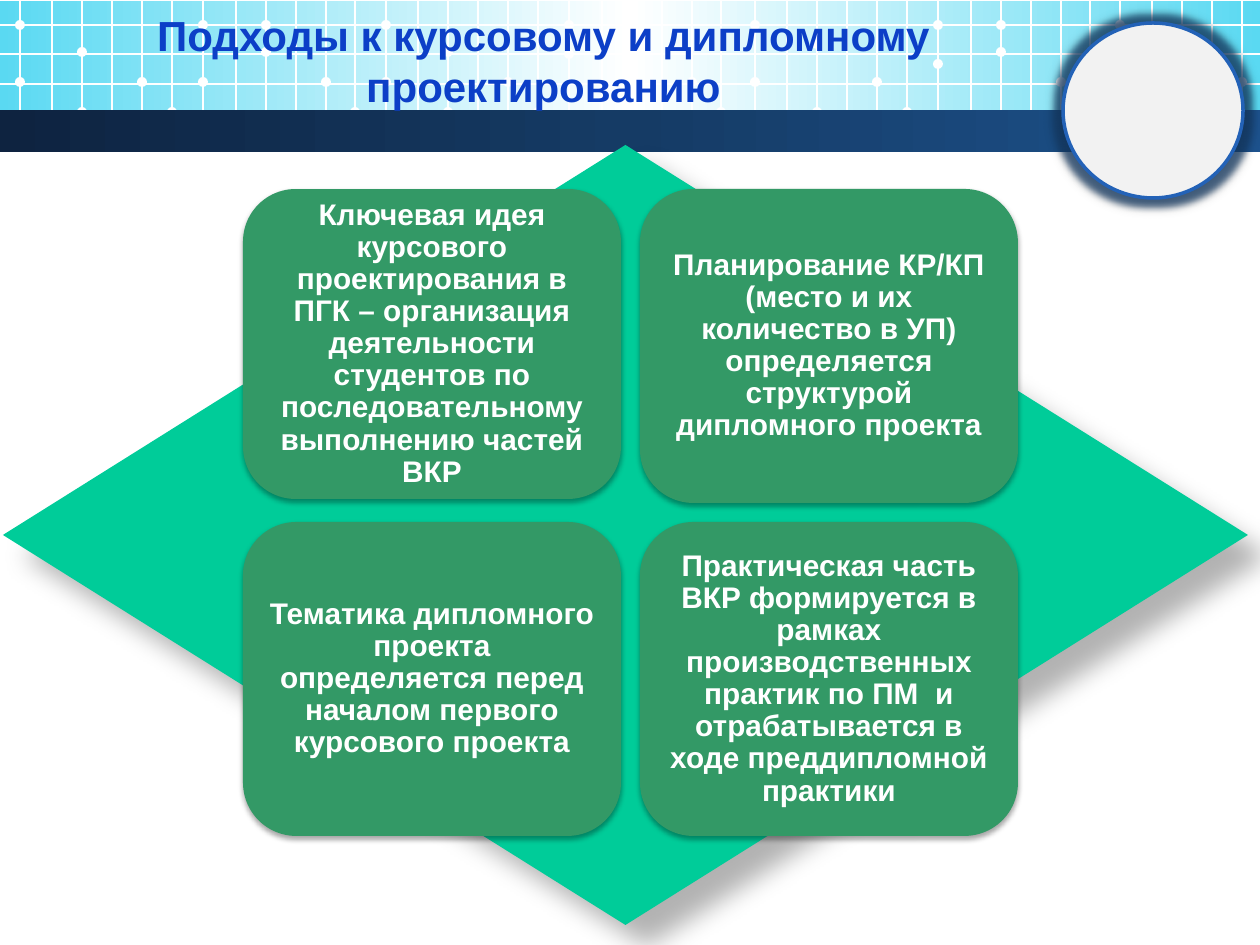
from lxml import etree
from pptx import Presentation
from pptx import util as u
from pptx.dml.color import RGBColor
from pptx.enum import shapes, text
from pptx.oxml import ns

SCALE = 914400 / 126
FONT = "Arial"
WHITE = RGBColor(0xFF, 0xFF, 0xFF)
CYAN = RGBColor(0x5A, 0xD9, 0xF2)
NAVY = RGBColor(0x0E, 0x23, 0x40)
DEEP_BLUE = RGBColor(0x15, 0x3B, 0x65)
BLUE = RGBColor(0x1D, 0x52, 0x8D)
RING = RGBColor(0x23, 0x62, 0xB7)
PALE = RGBColor(0xF2, 0xF2, 0xF2)
TITLE_BLUE = RGBColor(0x0C, 0x3F, 0xC7)
MINT = RGBColor(0x00, 0xCC, 0x99)
GREEN = RGBColor(0x33, 0x99, 0x66)
BLACK = RGBColor(0, 0, 0)

TITLE = "Подходы к курсовому и дипломному проектированию"
IDEAS = [
    "Ключевая идея курсового проектирования в ПГК – организация деятельности "
    "студентов по последовательному выполнению частей ВКР",
    "Планирование КР/КП (место и их количество в УП) определяется структурой "
    "дипломного проекта",
    "Тематика дипломного проекта определяется перед началом первого курсового проекта",
    "Практическая часть ВКР формируется в рамках производственных практик по ПМ  и "
    "отрабатывается в ходе преддипломной практики",
]


def px(length):
    return u.Emu(round(length * SCALE))


def add_element(parent, tag, **attributes):
    values = {name: str(value) for name, value in attributes.items()}
    return etree.SubElement(parent, ns.qn(tag), values)


def add_color(parent, color, opacity=100):
    node = add_element(parent, "a:srgbClr", val=color)
    if opacity < 100:
        add_element(node, "a:alpha", val=opacity * 1000)


def add_effects(shape, shadow, glow=None):
    effects = shape._element.spPr.find(ns.qn("a:effectLst"))
    if glow:
        color, opacity, radius = glow
        add_color(add_element(effects, "a:glow", rad=u.Pt(radius)), color, opacity)
    opacity, blur, distance, angle = shadow
    node = add_element(effects, "a:outerShdw", blurRad=u.Pt(blur), dist=u.Pt(distance),
                       dir=angle * 60000, algn="ctr", rotWithShape=0)
    add_color(node, BLACK, opacity)


def add_gradient(shape, colors):
    shape.fill.gradient()
    shape.fill.gradient_angle = 0
    stops = shape._element.spPr.find(ns.qn("a:gradFill")).find(ns.qn("a:gsLst"))
    for stop in list(stops):
        stops.remove(stop)
    for index, color in enumerate(colors):
        position = 100000 * index // (len(colors) - 1)
        add_color(add_element(stops, "a:gs", pos=position), color)


def add_plain_shape(slide, kind, box, color=None):
    shape = slide.shapes.add_shape(kind, *map(px, box))
    shape.shadow.inherit = False
    shape.line.fill.background()
    if color is not None:
        shape.fill.solid()
        shape.fill.fore_color.rgb = color
    return shape


def add_grid_line(slide, x1, y1, x2, y2):
    line = slide.shapes.add_connector(shapes.MSO_CONNECTOR.STRAIGHT,
                                      px(x1), px(y1), px(x2), px(y2))
    line.line.color.rgb = WHITE
    line.line.width = u.Pt(0.75)
    add_element(line._element.spPr, "a:effectLst")


def write_text(shape, wording, size, color, margin_x, margin_y):
    frame = shape.text_frame
    frame.text = wording
    frame.word_wrap = True
    frame.vertical_anchor = text.MSO_ANCHOR.MIDDLE
    frame.margin_left = frame.margin_right = px(margin_x)
    frame.margin_top = frame.margin_bottom = px(margin_y)
    paragraph = frame.paragraphs[0]
    paragraph.alignment = text.PP_ALIGN.CENTER
    font = paragraph.runs[0].font
    font.name, font.size, font.bold = FONT, u.Pt(size), True
    font.color.rgb = color
    return paragraph


def draw_header(slide, left, top, width, height):
    backdrop = add_plain_shape(slide, shapes.MSO_SHAPE.RECTANGLE,
                               (left, top + 1, width, 128))
    add_gradient(backdrop, [CYAN, WHITE, CYAN])
    columns = [0, 32, 62, 92, 122, 152, 183, 216, 246, 276, 306, 335]
    blocks = [(20, 12, 52, 82), (386, 12, 52, 54), (755, 12, 44, 64), (1120, 5, 52, 54)]
    for start, count, upper, middle in blocks:
        dot_rows = {0: (25, 82), 2: (upper, 112), 4: (82,), 5: (112,),
                    6: (25, middle), 8: (25, 52), 10: (82,), 11: (112,)}
        for index, offset in enumerate(columns[:count]):
            x = left + start + offset
            add_grid_line(slide, x, top, x, top + 139)
            for y in dot_rows.get(index, ()):
                add_plain_shape(slide, shapes.MSO_SHAPE.OVAL,
                                (x - 5, top + y - 5, 10, 10), WHITE)
    for y in (25, 54, 84, 112):
        add_grid_line(slide, left, top + y, left + width, top + y)
    band = add_plain_shape(slide, shapes.MSO_SHAPE.RECTANGLE,
                           (left, top + 110, width, height - 110))
    add_gradient(band, [NAVY, DEEP_BLUE, BLUE])
    badge = add_plain_shape(slide, shapes.MSO_SHAPE.OVAL,
                            (left + width - 197, top + 23, 180, 175), PALE)
    badge.line.color.rgb = RING
    badge.line.width = u.Pt(2)
    add_effects(badge, (40, 5, 0, 0), glow=(DEEP_BLUE, 70, 8))


def draw_title(slide, left, top, width, height):
    box = slide.shapes.add_textbox(*map(px, (left, top, width, height)))
    write_text(box, TITLE, 24, TITLE_BLUE, 13, 6)


def draw_matrix(slide, left, top, width, height):
    diamond = add_plain_shape(slide, shapes.MSO_SHAPE.DIAMOND,
                              (left, top, width, height), MINT)
    add_effects(diamond, (30, 15, 18, 45))
    card_width, card_height = 378, 314
    for index, idea in enumerate(IDEAS):
        row, column = divmod(index, 2)
        card_box = (left + 240 + column * (card_width + 19),
                    top + 44 + row * (card_height + 19),
                    card_width, card_height - (4 if index == 0 else 0))
        card = add_plain_shape(slide, shapes.MSO_SHAPE.ROUNDED_RECTANGLE, card_box, GREEN)
        card.adjustments[0] = 0.17
        add_effects(card, (35, 3.1, 1.8, 90))
        paragraph = write_text(card, idea, 17, WHITE, 9, 9)
        paragraph.line_spacing = 0.9


def main():
    presentation = Presentation()
    presentation.slide_width, presentation.slide_height = px(1260), px(945)
    slide = presentation.slides.add_slide(presentation.slide_layouts[6])
    draw_header(slide, 0, 0, 1260, 152)
    draw_title(slide, 15, 14, 1057, 92)
    draw_matrix(slide, 3, 145, 1245, 780)
    presentation.save("out.pptx")


if __name__ == "__main__":
    main()
